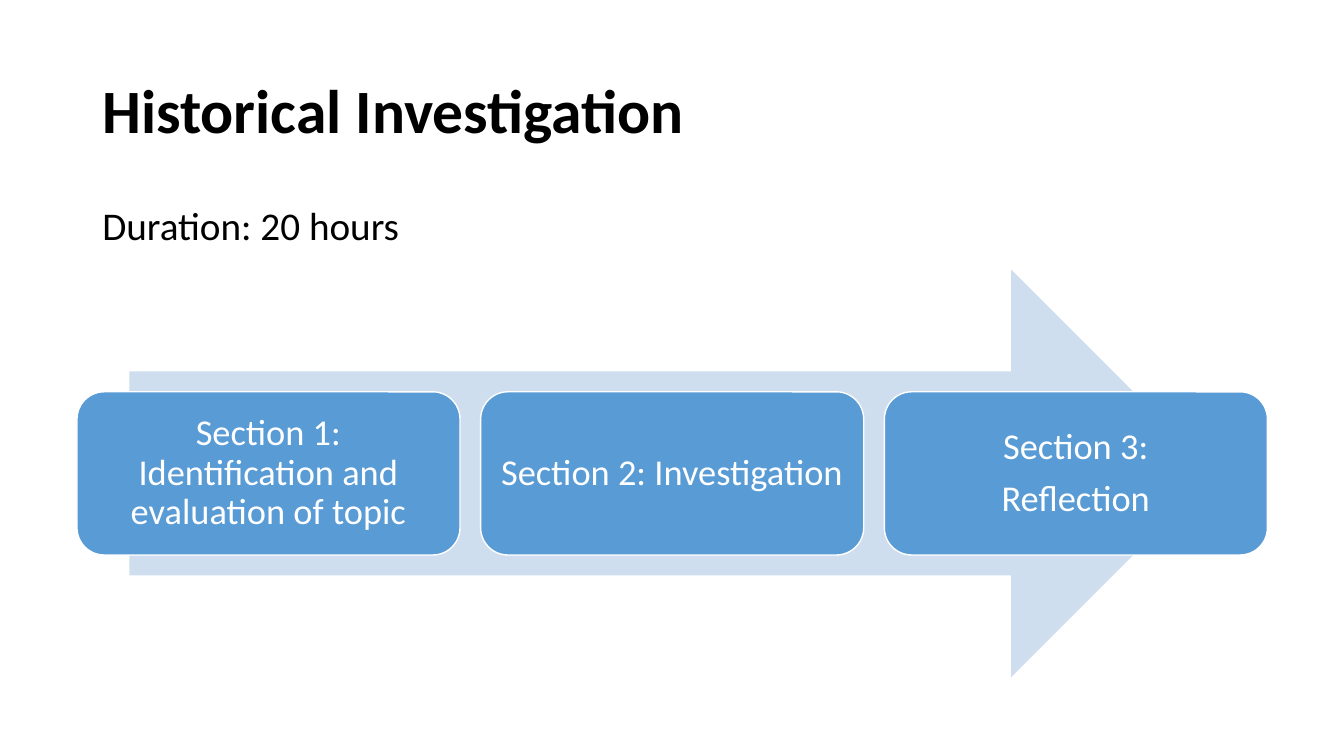
from dataclasses import dataclass

from pptx import Presentation
from pptx.dml.color import RGBColor
from pptx.enum.shapes import MSO_SHAPE as Preset
from pptx.enum.text import MSO_ANCHOR as Anchor, PP_ALIGN as Align
from pptx.util import Cm, Pt


@dataclass(frozen=True)
class Theme:
    font: str = "Calibri"
    ink: str = "000000"
    paper: str = "FFFFFF"
    arrow: str = "CFDEEF"
    card: str = "599BD5"
    title_size: int = 44
    body_size: int = 28
    card_size: int = 26


@dataclass(frozen=True)
class Box:
    left: float
    top: float
    width: float
    height: float

    def lengths(self):
        return Cm(self.left), Cm(self.top), Cm(self.width), Cm(self.height)


THEME = Theme()
SECTIONS = [
    ["Section 1: Identification and evaluation of topic"],
    ["Section 2: Investigation"],
    ["Section 3:", "Reflection"],
]


def apply_format(target, values):
    for name, value in values.items():
        setattr(target, name, value)


def write_text(shape, lines, size, color, bold=False, align=Align.LEFT,
               anchor=Anchor.TOP, inset=(0.25, 0.13), space_before=0):
    frame = shape.text_frame
    side, edge = (Cm(length) for length in inset)
    apply_format(frame, {
        "word_wrap": True, "vertical_anchor": anchor,
        "margin_left": side, "margin_right": side,
        "margin_top": edge, "margin_bottom": edge,
    })
    for index, line in enumerate(lines):
        paragraph = frame.add_paragraph() if index else frame.paragraphs[0]
        apply_format(paragraph, {
            "alignment": align, "line_spacing": 0.9,
            "space_before": Pt(space_before if index else 0),
        })
        run = paragraph.add_run()
        run.text = line
        apply_format(run.font, {"name": THEME.font, "size": Pt(size), "bold": bold})
        run.font.color.rgb = RGBColor.from_string(color)


def add_preset(slide, preset, box, fill):
    shape = slide.shapes.add_shape(preset, *box.lengths())
    shape.shadow.inherit = False
    shape.fill.solid()
    shape.fill.fore_color.rgb = RGBColor.from_string(fill)
    return shape


def add_title(slide, box):
    title = slide.shapes.add_textbox(*box.lengths())
    write_text(title, ["Historical Investigation"], THEME.title_size, THEME.ink,
               bold=True, anchor=Anchor.MIDDLE)


def add_body(slide, box):
    body = slide.shapes.add_textbox(*box.lengths())
    write_text(body, ["Duration: 20 hours"], THEME.body_size, THEME.ink)


def add_card(slide, box, lines):
    card = add_preset(slide, Preset.ROUNDED_RECTANGLE, box, THEME.card)
    card.adjustments[0] = 0.167
    card.line.color.rgb = RGBColor.from_string(THEME.paper)
    card.line.width = Pt(1)
    write_text(card, lines, THEME.card_size, THEME.paper, align=Align.CENTER,
               anchor=Anchor.MIDDLE, inset=(0.28, 0.28), space_before=9.1)


def add_process(slide, box, sections):
    arrow_width = box.width * 0.912
    arrow_box = Box(box.left + (box.width - arrow_width) / 2, box.top,
                    arrow_width, box.height)
    arrow = add_preset(slide, Preset.RIGHT_ARROW, arrow_box, THEME.arrow)
    arrow.line.fill.background()

    gap = 0.52
    count = len(sections)
    card_width = (box.width - gap * (count - 1)) / count
    card_height = box.height * 0.4
    card_top = box.top + (box.height - card_height) / 2
    for index, lines in enumerate(sections):
        card_left = box.left + index * (card_width + gap)
        add_card(slide, Box(card_left, card_top, card_width, card_height), lines)


def main():
    presentation = Presentation()
    apply_format(presentation, {"slide_width": Cm(33.87), "slide_height": Cm(19.05)})
    slide = presentation.slides.add_slide(presentation.slide_layouts[6])
    add_title(slide, Box(2.33, 1.01, 29.21, 3.68))
    add_body(slide, Box(2.33, 5.07, 29.21, 12.09))
    add_process(slide, Box(1.94, 6.79, 30, 10.28), SECTIONS)
    presentation.save("out.pptx")


if __name__ == "__main__":
    main()
